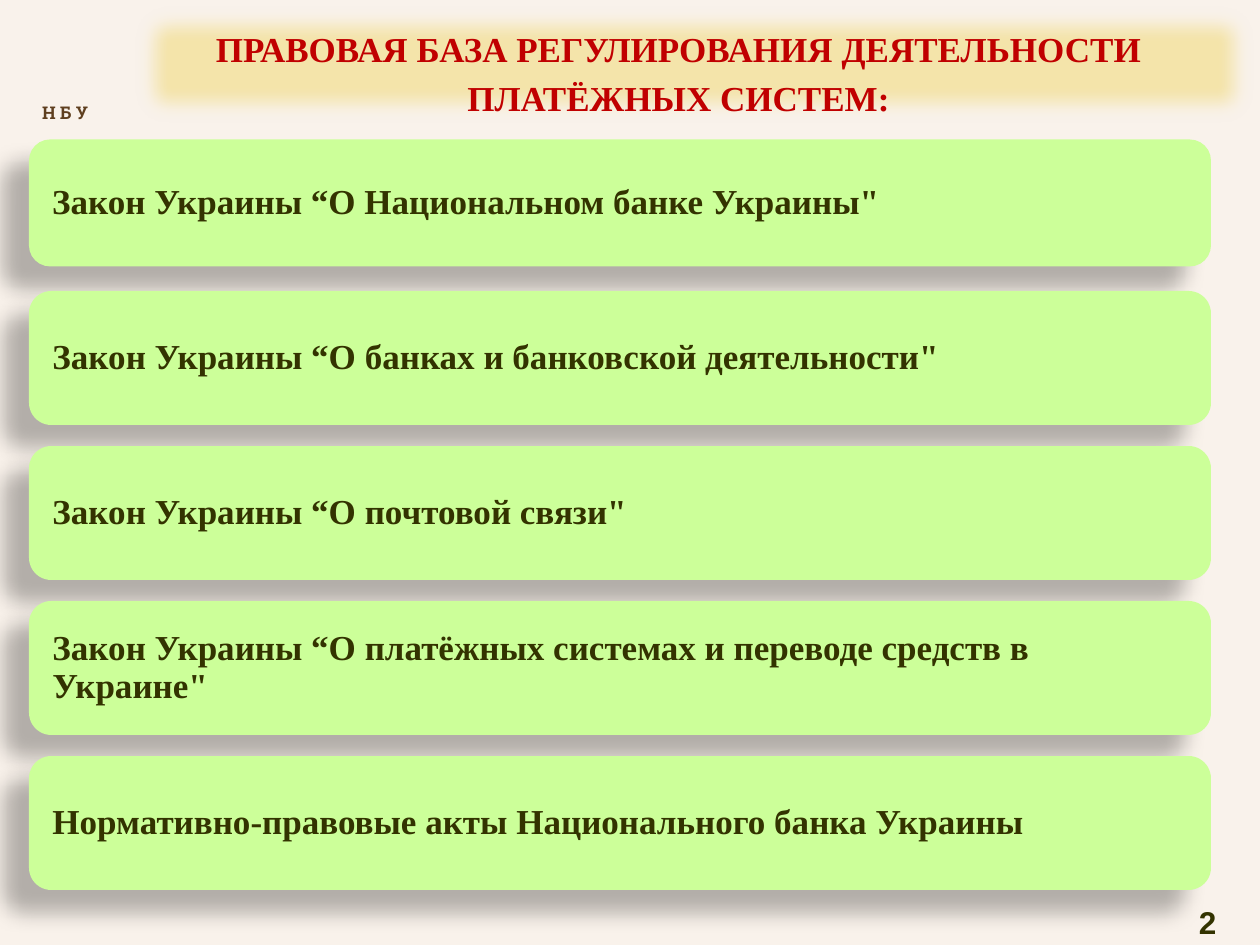
import lxml.etree
import pptx
import pptx.util
import pptx.dml.color
import pptx.enum.shapes
import pptx.enum.text
import pptx.oxml.ns

TITLE = "ПРАВОВАЯ БАЗА РЕГУЛИРОВАНИЯ ДЕЯТЕЛЬНОСТИ ПЛАТЁЖНЫХ СИСТЕМ:"
BANK = "Н Б У"
PAGE = "2"
# text, card height in px
LAWS = [
    ("Закон Украины “О Национальном банке Украины\"", 127),
    ("Закон Украины “О банках и банковской деятельности\"", 134),
    ("Закон Украины “О почтовой связи\"", 134),
    ("Закон Украины “О платёжных системах и переводе средств в Украине\"", 134),
    ("Нормативно-правовые акты Национального банка Украины", 134),
]


class Theme:
    back, band, card = "F9F2EB", "F4E4AA", "CCFF99"
    red, dark, brown, shade = "C00000", "333300", "5F3F1F", "000000"
    serif, slab, sans = "Times New Roman", "Roboto Slab", "Arial"
    body, small, page = 20, 10, 18


SCALE = 914400 / 126
LEFT, WIDE = 29, 1182
FIRST, STEP = 203, 155  # centre of the first card, distance between centres
INSET = 17

ALIGN = pptx.enum.text.PP_ALIGN
ANCHOR = pptx.enum.text.MSO_ANCHOR
SHAPE = pptx.enum.shapes.MSO_SHAPE


def px(n):
    return pptx.util.Emu(round(n * SCALE))


def rgb(code):
    return pptx.dml.color.RGBColor.from_string(code)


def write(shape, text, font, size, color, align, space=1.0, side=0, edge=0,
          anchor=ANCHOR.TOP):
    frame = shape.text_frame
    frame.text = text
    frame.word_wrap = True
    frame.auto_size = pptx.enum.text.MSO_AUTO_SIZE.NONE
    frame.vertical_anchor = anchor
    frame.margin_left = frame.margin_right = px(side)
    frame.margin_top = frame.margin_bottom = px(edge)
    para = frame.paragraphs[0]
    para.alignment = align
    para.line_spacing = space
    para.space_before = pptx.util.Pt(0)
    face = para.runs[0].font
    face.name, face.size, face.bold = font, pptx.util.Pt(size), True
    face.color.rgb = rgb(color)


def effect(shape, tag, **values):
    """Add one effect to the shape and return its element."""
    shape.shadow.inherit = False
    group = shape._element.spPr.find(pptx.oxml.ns.qn("a:effectLst"))
    return lxml.etree.SubElement(group, pptx.oxml.ns.qn(tag), values)


def block(slide, kind, box, fill):
    shape = slide.shapes.add_shape(kind, *map(px, box))
    shape.fill.solid()
    shape.fill.fore_color.rgb = rgb(fill)
    shape.line.fill.background()
    return shape


def cast(shape):
    """Drop a soft shadow to the lower left."""
    node = effect(shape, "a:outerShdw", blurRad="149860", dist="250190",
                  dir="8460000", algn="ctr", rotWithShape="0")
    tint = lxml.etree.SubElement(node, pptx.oxml.ns.qn("a:srgbClr"),
                                 val=Theme.shade)
    lxml.etree.SubElement(tint, pptx.oxml.ns.qn("a:alpha"), val="28000")


def head(slide):
    band = block(slide, SHAPE.RECTANGLE, (129, 0, 1131, 129), Theme.band)
    effect(band, "a:softEdge", rad="158750")
    slide.shapes._spTree.insert(2, band._element)  # behind the title
    title = slide.shapes.title
    title.left, title.top, title.width, title.height = map(px, (206, 20, 945, 93))
    write(title, TITLE, Theme.serif, Theme.body, Theme.red, ALIGN.CENTER, 1.17)


def label(slide, box, *style):
    shape = slide.shapes.add_textbox(*map(px, box))
    write(shape, *style, side=12, edge=6)


def cards(slide):
    for i, (law, high) in enumerate(LAWS):
        top = FIRST + i * STEP - high / 2
        card = block(slide, SHAPE.ROUNDED_RECTANGLE, (LEFT, top, WIDE, high),
                     Theme.card)
        cast(card)
        write(card, law, Theme.serif, Theme.body, Theme.dark, ALIGN.LEFT, 0.9,
              INSET, INSET, ANCHOR.MIDDLE)


def main():
    deck = pptx.Presentation()
    deck.slide_width, deck.slide_height = px(1260), px(945)
    slide = deck.slides.add_slide(deck.slide_layouts[5])
    slide.background.fill.solid()
    slide.background.fill.fore_color.rgb = rgb(Theme.back)
    head(slide)
    label(slide, (15, 96, 100, 34), BANK, Theme.slab, Theme.small, Theme.brown,
          ALIGN.CENTER)
    label(slide, (1187, 893, 73, 52), PAGE, Theme.sans, Theme.page, Theme.dark,
          ALIGN.LEFT, 1.1)
    cards(slide)
    deck.save("out.pptx")


if __name__ == "__main__":
    main()
